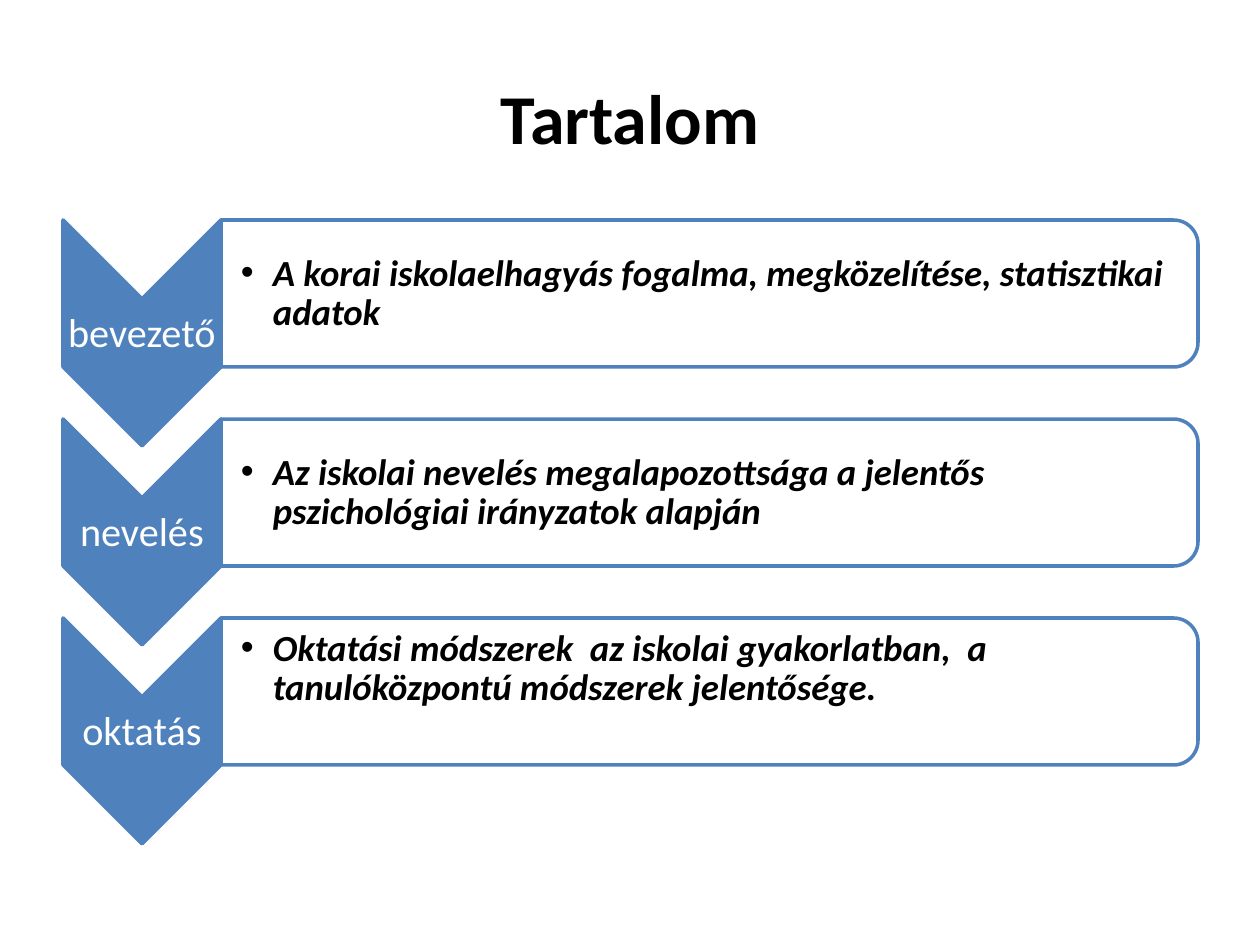
from lxml.etree import SubElement
from pptx import Presentation
from pptx.dml.color import RGBColor
from pptx.enum.shapes import MSO_SHAPE
from pptx.enum.text import MSO_ANCHOR, PP_ALIGN
from pptx.oxml.ns import qn
from pptx.util import Pt

EMU_PER_PX = 914400 / 126
BLUE, WHITE, BLACK = "4F81BD", "FFFFFF", "000000"
ROW_PITCH = 199
ROWS = [
    ("bevezető", "A korai iskolaelhagyás fogalma, megközelítése, statisztikai adatok", 1),
    ("nevelés", "Az iskolai nevelés megalapozottsága a jelentős pszichológiai irányzatok alapján", 1),
    ("oktatás", "Oktatási módszerek  az iskolai gyakorlatban,  a tanulóközpontú módszerek jelentősége.", 47),
]


def px(length):
    """Turn pixels into EMU."""
    return round(length * EMU_PER_PX)


def color(value):
    """Turn a hex string into a colour."""
    return RGBColor.from_string(value)


def add_text(slide, box, text, size, ink=BLACK, bold=False, italic=False,
             align=PP_ALIGN.LEFT, line_spacing=1.0, insets=(2, 2, 2, 2), bullet_indent=0):
    """Add a vertically centred text box, with a hanging bullet if an indent is given."""
    shape = slide.shapes.add_textbox(*map(px, box))
    frame = shape.text_frame
    frame.word_wrap = True
    frame.vertical_anchor = MSO_ANCHOR.MIDDLE
    frame.margin_left, frame.margin_top, frame.margin_right, frame.margin_bottom = map(px, insets)
    paragraph = frame.paragraphs[0]
    paragraph.alignment = align
    paragraph.line_spacing = line_spacing
    run = paragraph.add_run()
    run.text = text
    font = run.font
    font.name, font.size, font.bold, font.italic = "Calibri", Pt(size), bold, italic
    font.color.rgb = color(ink)
    if bullet_indent:
        properties = paragraph._p.get_or_add_pPr()
        properties.set("marL", str(px(bullet_indent)))
        properties.set("indent", str(-px(bullet_indent)))
        SubElement(properties, qn("a:buFont"), typeface="Arial")
        SubElement(properties, qn("a:buChar"), char="•")


def add_turned_shape(slide, kind, box, fill, opacity=100):
    """Add a shape turned clockwise by 90 degrees that covers the given box."""
    left, top, width, height = box
    shift = (width - height) / 2
    shape = slide.shapes.add_shape(kind, px(left + shift), px(top - shift), px(height), px(width))
    shape.rotation = 90
    shape.shadow.inherit = False
    shape.fill.solid()
    shape.fill.fore_color.rgb = color(fill)
    shape.line.color.rgb = color(BLUE)
    shape.line.width = Pt(2)
    if opacity < 100:
        fill_color = shape._element.spPr.find(qn("a:solidFill"))[0]
        SubElement(fill_color, qn("a:alpha"), val=str(opacity * 1000))


def add_row(slide, left, top, label, description, bottom_inset):
    """Draw a chevron with its label and the panel that describes it."""
    add_turned_shape(slide, MSO_SHAPE.CHEVRON, (left, top, 158, 226), BLUE)
    add_text(slide, (left, top + 80, 158, 68), label, 23, ink=WHITE,
             align=PP_ALIGN.CENTER, line_spacing=0.9)
    panel_left = left + 158
    add_turned_shape(slide, MSO_SHAPE.ROUND_2_SAME_RECTANGLE,
                     (panel_left, top, 977, 147), WHITE, opacity=90)
    add_text(slide, (panel_left, top + 8, 969, 132), description, 21, bold=True, italic=True,
             line_spacing=0.9, insets=(20, 1, 1, bottom_inset), bullet_indent=32)


def main():
    """Build and save the contents slide."""
    presentation = Presentation()
    presentation.slide_width, presentation.slide_height = px(1260), px(945)
    slide = presentation.slides.add_slide(presentation.slide_layouts[6])
    add_text(slide, (63, 38, 1134, 158), "Tartalom", 40, bold=True, align=PP_ALIGN.CENTER,
             insets=(13, 6, 13, 6))
    for index, row in enumerate(ROWS):
        add_row(slide, 63, 220 + index * ROW_PITCH, *row)
    presentation.save("out.pptx")


if __name__ == "__main__":
    main()
